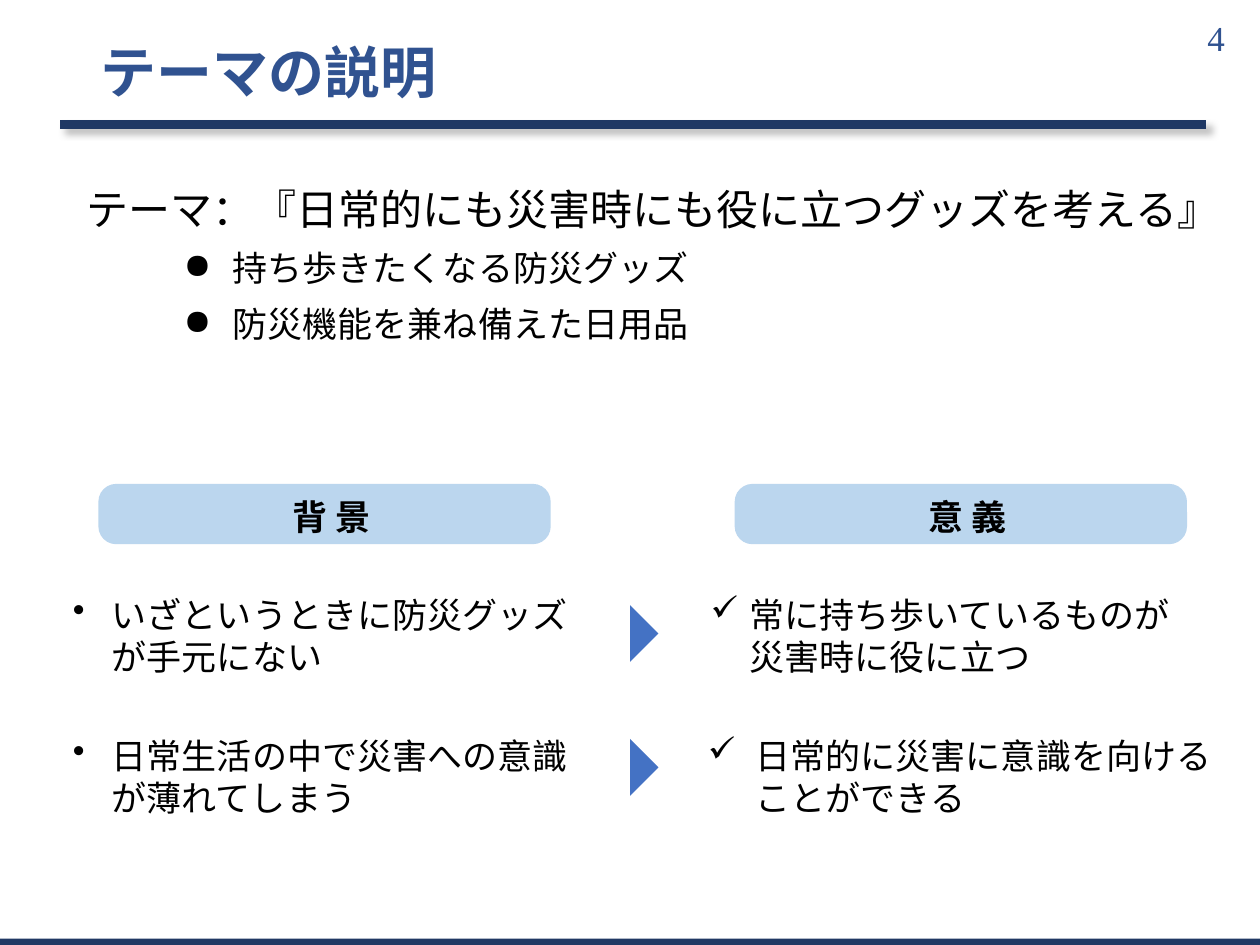
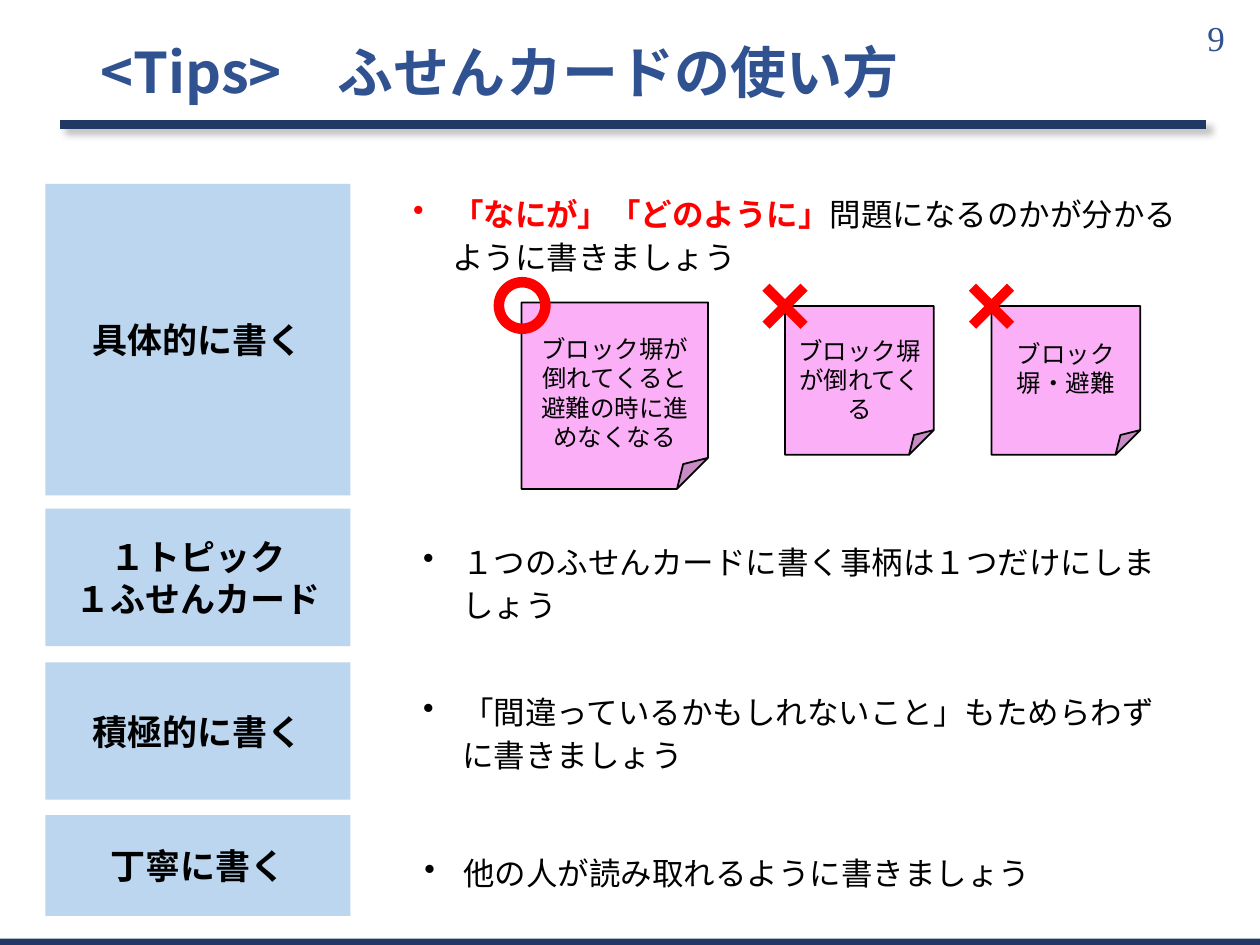
from dataclasses import dataclass

import lxml.etree
import pptx
import pptx.dml.color
import pptx.enum.shapes
import pptx.enum.text
import pptx.oxml.ns
import pptx.util

Pt = pptx.util.Pt
RGB = pptx.dml.color.RGBColor.from_string
Kind = pptx.enum.shapes.MSO_SHAPE
Align = pptx.enum.text.PP_ALIGN
Anchor = pptx.enum.text.MSO_ANCHOR
qn = pptx.oxml.ns.qn


@dataclass(frozen=True)
class Theme:
    sans: str = "Noto Sans CJK JP"
    serif: str = "Times New Roman"
    ink: str = "000000"
    head: str = "305290"
    rule: str = "1F3864"
    foot: str = "213964"
    pale: str = "BBD6EE"
    arrow: str = "4472C4"
    note: str = "FBAFF7"
    alert: str = "FF0000"
    title: int = 32
    lead: int = 24
    body: int = 20
    tip: int = 18
    memo: int = 14


THEME = Theme()


def add_node(parent, tag, **attrs):
    return lxml.etree.SubElement(parent, qn(tag), attrs)


def set_frame(frame, anchor=Anchor.TOP, pad=3.6):
    frame.word_wrap = True
    frame.auto_size = pptx.enum.text.MSO_AUTO_SIZE.NONE
    frame.vertical_anchor = anchor
    frame.margin_left = frame.margin_right = Pt(7.2)
    frame.margin_top = frame.margin_bottom = Pt(pad)


def style(para, size, color=THEME.ink, bold=False, face=THEME.sans,
          align=Align.LEFT, space=1.0, left=0, hang=0, mark=None, tone=THEME.ink):
    para.alignment = align
    para.line_spacing = space
    props = para._p.get_or_add_pPr()
    props.set("marL", str(Pt(left)))
    props.set("indent", str(Pt(-hang)))
    if mark:
        add_node(add_node(props, "a:buClr"), "a:srgbClr", val=tone)
        add_node(props, "a:buChar", char=mark)
    font = para.font
    font.size = Pt(size)
    font.bold = bold
    font.name = face
    font.color.rgb = RGB(color)
    add_node(props.find(qn("a:defRPr")), "a:ea", typeface=face)


def write(frame, text, size, **look):
    for index, line in enumerate(text.split("\n")):
        para = frame.add_paragraph() if index else frame.paragraphs[0]
        para.add_run().text = line
        style(para, size, **look)


def add_text(slide, box, text, size, anchor=Anchor.TOP, **look):
    frame = slide.shapes.add_textbox(*map(Pt, box)).text_frame
    set_frame(frame, anchor)
    write(frame, text, size, **look)
    return frame


def add_form(slide, kind, box, fill=None, line=None, width=1, adjust=None):
    form = slide.shapes.add_shape(kind, *map(Pt, box))
    form.shadow.inherit = False
    if fill:
        form.fill.solid()
        form.fill.fore_color.rgb = RGB(fill)
    else:
        form.fill.background()
    if line:
        form.line.color.rgb = RGB(line)
        form.line.width = Pt(width)
    else:
        form.line.fill.background()
    if adjust is not None:
        form.adjustments[0] = adjust
    return form


def add_label(slide, kind, box, text, adjust=None, **look):
    form = add_form(slide, kind, box, THEME.pale, adjust=adjust)
    set_frame(form.text_frame, Anchor.MIDDLE)
    write(form.text_frame, text, THEME.body, bold=True, align=Align.CENTER, **look)


def add_note(slide, left, top, side, text, anchor):
    form = add_form(slide, Kind.FOLDED_CORNER, (left, top, side, side),
                    THEME.note, THEME.ink)
    set_frame(form.text_frame, anchor)
    write(form.text_frame, text, THEME.memo, align=Align.CENTER)


def add_rule(slide):
    rule = slide.shapes.add_connector(
        pptx.enum.shapes.MSO_CONNECTOR.STRAIGHT,
        Pt(34.5), Pt(71.3), Pt(689), Pt(71.3))
    rule.line.color.rgb = RGB(THEME.rule)
    rule.line.width = Pt(5)
    effect = add_node(rule._element.spPr, "a:effectLst")
    shade = add_node(effect, "a:outerShdw", blurRad=str(Pt(4)), dist=str(Pt(4)),
                     dir="2700000", algn="tl", rotWithShape="0")
    color = add_node(shade, "a:srgbClr", val=THEME.ink)
    add_node(color, "a:alpha", val="25000")


def add_page(deck, title, number):
    slide = deck.slides.add_slide(deck.slide_layouts[5])
    head = slide.shapes.title
    head.left, head.top, head.width, head.height = map(Pt, (50, 14, 621, 57.6))
    set_frame(head.text_frame, Anchor.MIDDLE, 0)
    write(head.text_frame, title, THEME.title, color=THEME.head, bold=True, space=0.9)
    add_text(slide, (663, 7.2, 44, 29), number, THEME.body, Anchor.MIDDLE,
             color=THEME.head, face=THEME.serif, align=Align.RIGHT)
    add_rule(slide)
    add_form(slide, Kind.RECTANGLE, (0, 536.4, 720, 3.6), THEME.foot)
    return slide


def make_theme(deck):
    slide = add_page(deck, "テーマの説明", "4")
    frame = add_text(slide, (34.5, 104.4, 679, 114),
                     "テーマ：『日常的にも災害時にも役に立つグッズを考える』",
                     THEME.lead, space=0.9, left=8)
    for goal in ("持ち歩きたくなる防災グッズ", "防災機能を兼ね備えた日用品"):
        para = frame.add_paragraph()
        para.add_run().text = goal
        para.space_before = Pt(10)
        style(para, THEME.body, space=0.9, left=91.4, hang=28, mark="●")

    for left, text in ((56.2, "背 景"), (419.8, "意 義")):
        add_label(slide, Kind.ROUNDED_RECTANGLE, (left, 276.5, 258.5, 34.5), text,
                  adjust=0.295, space=1.14, left=8)

    points = (
        (34.5, 335.5, 303, 22.3, "•", "いざというときに防災グッズが手元にない"),
        (34.5, 416.2, 303, 22.3, "•", "日常生活の中で災害への意識が薄れてしまう"),
        (399, 335.5, 292, 22.3, "✓", "常に持ち歩いているものが災害時に役に立つ"),
        (397.4, 416.2, 303, 27.3, "✓", "日常的に災害に意識を向けることができる"),
    )
    for left, top, width, hang, mark, text in points:
        add_text(slide, (left, top, width, 55.4), text, THEME.body,
                 left=hang, hang=hang, mark=mark)
    for top in (350.5, 427):
        wedge = add_form(slide, Kind.RIGHT_TRIANGLE, (348.5, top, 23, 23), THEME.arrow)
        wedge.rotation = 225


def make_tips(deck):
    slide = add_page(deck, "<Tips>　ふせんカードの使い方", "9")
    labels = (
        (105.1, 178, "具体的に書く"),
        (290.7, 78.5, "１トピック\n１ふせんカード"),
        (378.5, 78.5, "積極的に書く"),
        (465.8, 57.6, "丁寧に書く"),
    )
    for top, height, text in labels:
        add_label(slide, Kind.RECTANGLE, (26, top, 174.2, height), text)

    look = dict(space=1.14, left=22.3, hang=22.3, mark="•")
    frame = add_text(slide, (229, 105.1, 463.7, 55.4), "「なにが」「どのように」",
                     THEME.tip, tone=THEME.alert, **look)
    para = frame.paragraphs[0]
    para.runs[0].font.bold = True
    para.runs[0].font.color.rgb = RGB(THEME.alert)
    para.add_run().text = "問題になるのかが分かるように書きましょう"

    tips = (
        (234.7, 303.8, 463.7, 50.4, Anchor.TOP,
         "１つのふせんカードに書く事柄は１つだけにしましょう"),
        (234.7, 388.8, 438.5, 57.6, Anchor.MIDDLE,
         "「間違っているかもしれないこと」もためらわずに書きましょう"),
        (235.4, 481.7, 463.7, 50.4, Anchor.TOP,
         "他の人が読み取れるように書きましょう"),
    )
    for *box, anchor, text in tips:
        add_text(slide, box, text, THEME.tip, anchor, **look)

    add_note(slide, 298, 172.8, 106.6,
             "ブロック塀が倒れてくると避難の時に進めなくなる", Anchor.BOTTOM)
    add_form(slide, Kind.OVAL, (285.1, 161.3, 26.6, 26.6), line=THEME.alert, width=6)
    poor = (
        (448.6, "ブロック塀が倒れてくる", Anchor.BOTTOM),
        (566.6, "ブロック塀・避難", Anchor.MIDDLE),
    )
    for left, text, anchor in poor:
        add_note(slide, left, 174.9, 85, text, anchor)
        add_form(slide, Kind.MATH_MULTIPLY, (left - 20.9, 154.1, 41.8, 41.8),
                 THEME.alert, adjust=0.137)


def main():
    deck = pptx.Presentation()
    deck.slide_width, deck.slide_height = Pt(720), Pt(540)
    make_theme(deck)
    make_tips(deck)
    deck.save("out.pptx")


if __name__ == "__main__":
    main()
